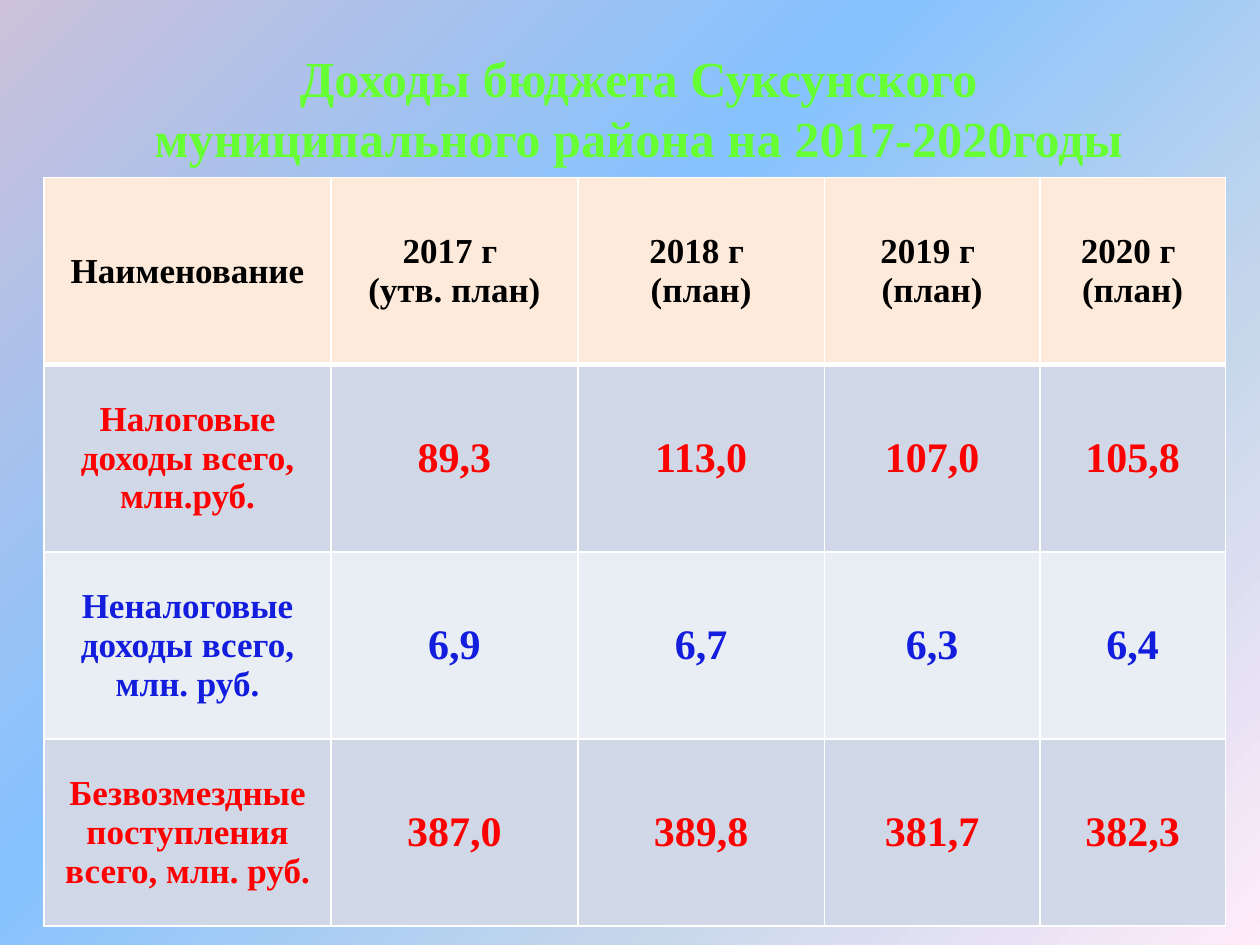
from lxml.etree import SubElement
from pptx import Presentation
from pptx.dml.color import RGBColor
from pptx.enum.text import MSO_ANCHOR as Anchor, MSO_AUTO_SIZE as AutoSize, PP_ALIGN as Align
from pptx.oxml.ns import qn
from pptx.util import Pt

BACKGROUND_STOPS = [(0, "CCC1DA"), (40, "85C2FF"), (70, "C4D6EB"), (100, "FFEBFA")]
TITLE = "Доходы бюджета Суксунского муниципального района на 2017-2020годы"
COLUMN_WIDTHS = [164, 141, 141, 123, 106]
ROW_HEIGHT = 106.9
HEADER = ["Наименование", "2017 г \n(утв. план)", "2018 г \n(план)",
          "2019 г \n(план)", "2020 г \n(план)"]
INCOMES = [
    ["Налоговые доходы всего, млн.руб.", "89,3", "113,0", "107,0", "105,8"],
    ["Неналоговые доходы всего, млн. руб.", "6,9", "6,7", "6,3", "6,4"],
    ["Безвозмездные поступления всего, млн. руб.", "387,0", "389,8", "381,7", "382,3"],
]
ROW_STYLES = [("FDEADA", "000000"), ("D0D8E8", "FF0000"),
              ("E9EDF4", "131DDD"), ("D0D8E8", "FF0000")]


def rgb(code):
    """Turn a hex string into a colour."""
    return RGBColor.from_string(code)


def write(frame, text, size, color, bold=True, align=Align.CENTER):
    """Put text into a frame and format each of its paragraphs."""
    frame.text = text
    for paragraph in frame.paragraphs:
        paragraph.alignment = align
        for run in paragraph.runs:
            font = run.font
            font.name, font.size, font.bold = "Times New Roman", Pt(size), bold
            font.color.rgb = rgb(color)


def paint_background(slide):
    """Fill the slide with the diagonal gradient."""
    fill = slide.background.fill
    fill.gradient()
    fill.gradient_angle = 315
    stops = slide.element.xpath(".//p:bg//a:gsLst")[0]
    for stop in list(stops):
        stops.remove(stop)
    for percent, color in BACKGROUND_STOPS:
        stop = SubElement(stops, qn("a:gs"), pos=str(percent * 1000))
        SubElement(stop, qn("a:srgbClr"), val=color)


def add_title(slide):
    """Place and format the title."""
    title = slide.shapes.title
    title.left, title.top, title.width, title.height = Pt(78.5), Pt(16.5), Pt(573), Pt(90)
    frame = title.text_frame
    frame.word_wrap, frame.auto_size = True, AutoSize.NONE
    frame.vertical_anchor = Anchor.MIDDLE
    write(frame, TITLE, 28.8, "66FF33")


def add_borders(cell, top, bottom):
    """Draw white lines around a cell, with the given top and bottom widths."""
    properties = cell._tc.get_or_add_tcPr()
    for side, width in (("L", 1), ("R", 1), ("T", top), ("B", bottom)):
        line = SubElement(properties, qn("a:ln" + side), w=str(Pt(width)))
        SubElement(SubElement(line, qn("a:solidFill")), qn("a:srgbClr"), val="FFFFFF")


def add_income_table(slide):
    """Build the table of incomes by year."""
    rows = [HEADER] + INCOMES
    table = slide.shapes.add_table(
        len(rows), len(HEADER), Pt(25.2), Pt(101.5),
        Pt(sum(COLUMN_WIDTHS)), Pt(ROW_HEIGHT * len(rows))).table
    for column, width in zip(table.columns, COLUMN_WIDTHS):
        column.width = Pt(width)
    for r, (texts, (background, color)) in enumerate(zip(rows, ROW_STYLES)):
        table.rows[r].height = Pt(ROW_HEIGHT)
        for c, text in enumerate(texts):
            cell = table.cell(r, c)
            add_borders(cell, top=3 if r == 1 else 1, bottom=3 if r == 0 else 1)
            cell.fill.solid()
            cell.fill.fore_color.rgb = rgb(background)
            cell.vertical_anchor = Anchor.MIDDLE
            write(cell.text_frame, text, 24 if r and c else 20, color)


def main():
    """Create the slide and save it."""
    presentation = Presentation()
    presentation.slide_width, presentation.slide_height = Pt(720), Pt(540)
    slide = presentation.slides.add_slide(presentation.slide_layouts[5])
    paint_background(slide)
    add_title(slide)
    add_income_table(slide)
    presentation.save("out.pptx")


if __name__ == "__main__":
    main()
